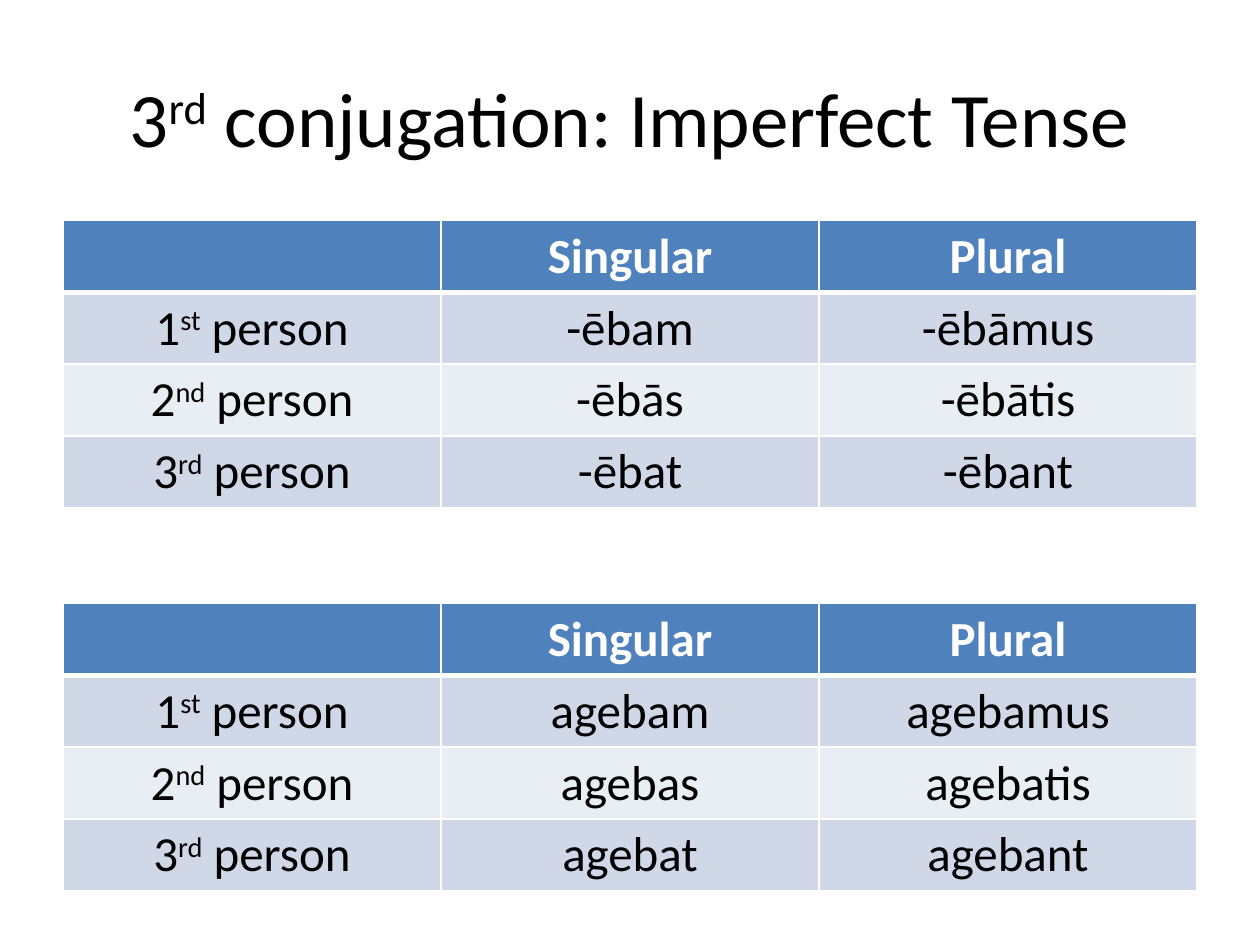
"""Build a slide with the imperfect tense endings and forms of the third conjugation."""
from dataclasses import dataclass

from lxml import etree
from pptx import Presentation
from pptx import util as u
from pptx.dml.color import RGBColor
from pptx.enum import text
from pptx.oxml.ns import qn

TITLE = ("3", "rd", " conjugation: Imperfect Tense")
HEADINGS = ("", "Singular", "Plural")
PERSONS = (("1", "st", " person"), ("2", "nd", " person"), ("3", "rd", " person"))
ENDINGS = (("-ēbam", "-ēbāmus"), ("-ēbās", "-ēbātis"), ("-ēbat", "-ēbant"))
FORMS = (("agebam", "agebamus"), ("agebas", "agebatis"), ("agebat", "agebant"))
TABLES = ((1.75, ENDINGS), (4.79, FORMS))
LEFT, WIDTH, ROW_HEIGHT = 0.5, 9, 0.57


@dataclass(frozen=True)
class Theme:
    font: str = "Calibri"
    title_size: int = 44
    table_size: int = 28
    ink: str = "000000"
    white: str = "FFFFFF"
    header: str = "4F81BD"
    bands: tuple = ("D0D8E8", "E9EDF4")
    thin: int = 1
    thick: int = 3


THEME = Theme()


def write(paragraph, parts, size, color, bold=False):
    paragraph.alignment = text.PP_ALIGN.CENTER
    for index, part in enumerate(parts):
        run = paragraph.add_run()
        run.text = part
        run.font.name = THEME.font
        run.font.size = u.Pt(size)
        run.font.bold = bold
        run.font.color.rgb = RGBColor.from_string(color)
        if index == 1:
            run.font._element.set("baseline", "30000")


def add_borders(cell, top, bottom):
    properties = cell._tc.get_or_add_tcPr()
    widths = {"L": THEME.thin, "R": THEME.thin, "T": top, "B": bottom}
    for side, width in widths.items():
        line = etree.SubElement(properties, qn(f"a:ln{side}"), w=str(u.Pt(width)))
        fill = etree.SubElement(line, qn("a:solidFill"))
        etree.SubElement(fill, qn("a:srgbClr"), val=THEME.white)


def style_cell(cell, row):
    top = THEME.thick if row == 1 else THEME.thin
    bottom = THEME.thick if row == 0 else THEME.thin
    add_borders(cell, top, bottom)
    color = THEME.bands[(row - 1) % 2] if row else THEME.header
    cell.fill.solid()
    cell.fill.fore_color.rgb = RGBColor.from_string(color)


def add_title(slide):
    box = slide.shapes.add_textbox(
        u.Inches(LEFT), u.Inches(0.3), u.Inches(WIDTH), u.Inches(1.25))
    frame = box.text_frame
    frame.word_wrap = True
    frame.vertical_anchor = text.MSO_ANCHOR.MIDDLE
    write(frame.paragraphs[0], TITLE, THEME.title_size, THEME.ink)


def add_conjugation(slide, top, verbs):
    rows = [[(heading,) if heading else () for heading in HEADINGS]]
    rows += [[person, (singular,), (plural,)]
             for person, (singular, plural) in zip(PERSONS, verbs)]
    table = slide.shapes.add_table(
        len(rows), len(HEADINGS), u.Inches(LEFT), u.Inches(top),
        u.Inches(WIDTH), u.Inches(ROW_HEIGHT * len(rows))).table
    table.horz_banding = False
    for row, entries in enumerate(rows):
        for column, parts in enumerate(entries):
            cell = table.cell(row, column)
            style_cell(cell, row)
            write(cell.text_frame.paragraphs[0], parts, THEME.table_size,
                  THEME.ink if row else THEME.white, bold=row == 0)


def main():
    presentation = Presentation()
    presentation.slide_width = u.Inches(10)
    presentation.slide_height = u.Inches(7.5)
    slide = presentation.slides.add_slide(presentation.slide_layouts[6])
    add_title(slide)
    for top, verbs in TABLES:
        add_conjugation(slide, top, verbs)
    presentation.save("out.pptx")


if __name__ == "__main__":
    main()
